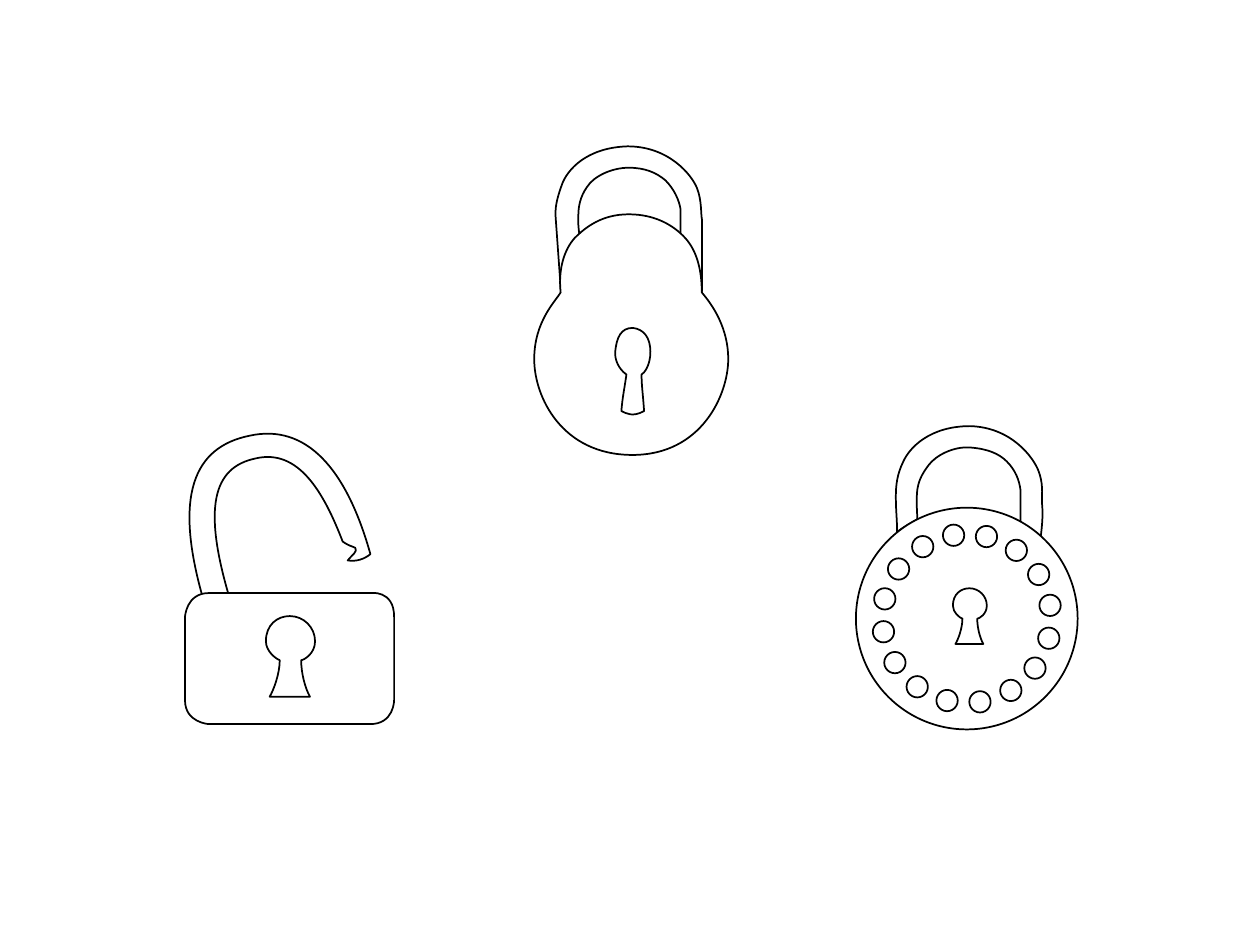
import math

import pptx
import pptx.dml.color
import pptx.enum.shapes
import pptx.oxml.ns
import pptx.util
from lxml import etree

Cm = pptx.util.Cm
COLORS = {"line": "000000", "fill": "FFFFFF"}
UNIT = Cm(0.0254)  # drawing unit: a hundredth of an inch

# Outlines: a start point, then cubic curves of two control points and an end
KEYHOLE = [
    (19, 0),
    (9, 0), (0, 7), (0, 20),
    (0, 28), (8, 34), (11, 35),
    (11, 46), (6, 59), (3, 64),
    (19, 64), (29, 64), (35, 64),
    (31, 57), (28, 45), (28, 35),
    (30, 35), (39, 30), (39, 20),
    (39, 9), (30, 0), (19, 0),
]
OVAL_KEYHOLE = [
    (14, 0),
    (5, 0), (1, 7), (0, 20),
    (0, 29), (6, 35), (9, 37),
    (7, 51), (6, 54), (5, 66),
    (9, 68), (14, 71), (23, 66),
    (22, 51), (21, 46), (21, 37),
    (23, 36), (28, 30), (28, 19),
    (28, 8), (23, 1), (14, 0),
]
OPEN_SHACKLE = [
    (157, 104),
    (138, 36), (106, 0), (61, 10),
    (17, 19), (0, 57), (25, 142),
    (31, 142), (38, 141), (45, 138),
    (24, 67), (32, 35), (66, 28),
    (100, 20), (120, 55), (135, 94),
    (141, 98), (141, 97), (145, 99),
    (147, 102), (143, 104), (139, 109),
    (146, 110), (152, 108), (157, 104),
]
BOX_BODY = [
    (166, 88),
    (166, 88), (166, 107), (147, 107),
    (83, 107), (19, 107), (19, 107),
    (19, 107), (0, 106), (0, 88),
    (0, 55), (0, 22), (0, 22),
    (0, 22), (1, 3), (19, 3),
    (83, 3), (147, 3), (147, 3),
    (147, 3), (166, 0), (166, 22),
    (166, 55), (166, 88), (166, 88),
]
DIAL_SHACKLE = [
    (99, 77),
    (106, 80), (109, 84), (115, 88),
    (116, 79), (117, 71), (116, 61),
    (116, 53), (117, 45), (113, 35),
    (109, 25), (92, 1), (59, 0),
    (27, 0), (11, 17), (6, 28),
    (1, 38), (0, 47), (0, 56),
    (0, 68), (1, 73), (1, 84),
    (8, 79), (10, 78), (17, 74),
    (17, 64), (16, 63), (17, 51),
    (18, 44), (20, 39), (26, 31),
    (32, 23), (46, 16), (59, 17),
    (73, 18), (82, 22), (88, 28),
    (95, 35), (98, 43), (99, 51),
    (99, 65), (99, 69), (99, 77),
]
ROUND_SHACKLE = [
    (100, 70),
    (100, 70), (117, 115), (117, 115),
    (117, 115), (117, 87), (117, 58),
    (116, 54), (117, 43), (113, 33),
    (109, 23), (91, 0), (58, 0),
    (25, 1), (10, 19), (6, 30),
    (2, 41), (0, 49), (1, 58),
    (3, 86), (5, 114), (5, 114),
    (5, 114), (20, 72), (20, 72),
    (20, 72), (18, 60), (19, 53),
    (19, 49), (20, 40), (26, 32),
    (31, 24), (45, 17), (59, 17),
    (72, 17), (81, 21), (88, 27),
    (95, 34), (99, 43), (100, 50),
    (100, 60), (100, 70), (100, 70),
]
ROUND_BODY = [
    (120, 19),
    (110, 8), (95, 0), (75, 0),
    (54, 0), (41, 10), (32, 19),
    (24, 28), (19, 43), (21, 62),
    (17, 69), (0, 85), (0, 115),
    (0, 145), (22, 191), (78, 191),
    (133, 191), (154, 143), (154, 115),
    (154, 86), (137, 67), (133, 62),
    (133, 44), (129, 29), (120, 19),
]


def style(sp, filled=True):
    sp.shadow.inherit = False
    if filled:
        sp.fill.solid()
        sp.fill.fore_color.rgb = pptx.dml.color.RGBColor.from_string(COLORS["fill"])
    else:
        sp.fill.background()
    sp.line.color.rgb = pptx.dml.color.RGBColor.from_string(COLORS["line"])
    sp.line.width = pptx.util.Pt(1)


def add_outline(shapes, points, left, top, scale=1, filled=True):
    """Draw a closed outline of cubic curves."""
    fb = shapes.build_freeform(*points[0], scale=UNIT * scale)
    fb.add_line_segments(points[1:], close=True)
    sp = fb.convert_to_shape(left, top)
    # Join each three line points into one curve
    qn = pptx.oxml.ns.qn
    lines = list(sp._element.iter(qn("a:lnTo")))
    for i in range(0, len(lines), 3):
        curve = etree.Element(qn("a:cubicBezTo"))
        lines[i].addprevious(curve)
        for line in lines[i:i + 3]:
            curve.append(line[0])
            line.getparent().remove(line)
    style(sp, filled)


def add_circle(shapes, cx, cy, size):
    sp = shapes.add_shape(pptx.enum.shapes.MSO_SHAPE.OVAL,
                          int(cx - size / 2), int(cy - size / 2), size, size)
    style(sp)


def add_open_lock(slide, left, top):
    shapes = slide.shapes.add_group_shape().shapes
    add_outline(shapes, OPEN_SHACKLE, left, top)
    add_outline(shapes, BOX_BODY, left + Cm(0.25), top + Cm(3.35))
    add_outline(shapes, KEYHOLE, left + Cm(1.88), top + Cm(3.89))


def add_dial_lock(slide, left, top):
    shapes = slide.shapes.add_group_shape().shapes
    add_outline(shapes, DIAL_SHACKLE, left + Cm(0.81), top + Cm(0.03), filled=False)
    # Dial with a ring of evenly spaced dots
    cx, cy, radius, dots = left + Cm(2.24), top + Cm(3.91), Cm(1.7), 16
    add_circle(shapes, cx, cy, Cm(4.47))
    for i in range(dots):
        angle = math.radians(-9 + i * 360 / dots)
        add_circle(shapes, cx + radius * math.cos(angle),
                   cy + radius * math.sin(angle), Cm(0.43))
    add_outline(shapes, KEYHOLE, left + Cm(1.96), top + Cm(3.3), scale=0.69)


def add_round_lock(slide, left, top):
    shapes = slide.shapes.add_group_shape().shapes
    add_outline(shapes, ROUND_SHACKLE, left + Cm(0.41), top, filled=False)
    add_outline(shapes, ROUND_BODY, left, top + Cm(1.37))
    add_outline(shapes, OVAL_KEYHOLE, left + Cm(1.63), top + Cm(3.66))


def main():
    prs = pptx.Presentation()
    prs.slide_width, prs.slide_height = Cm(25.4), Cm(19.05)
    slide = prs.slides.add_slide(prs.slide_layouts[6])
    add_open_lock(slide, Cm(3.48), Cm(8.53))
    add_dial_lock(slide, Cm(17.25), Cm(8.56))
    add_round_lock(slide, Cm(10.77), Cm(2.95))
    prs.save("out.pptx")


if __name__ == "__main__":
    main()
